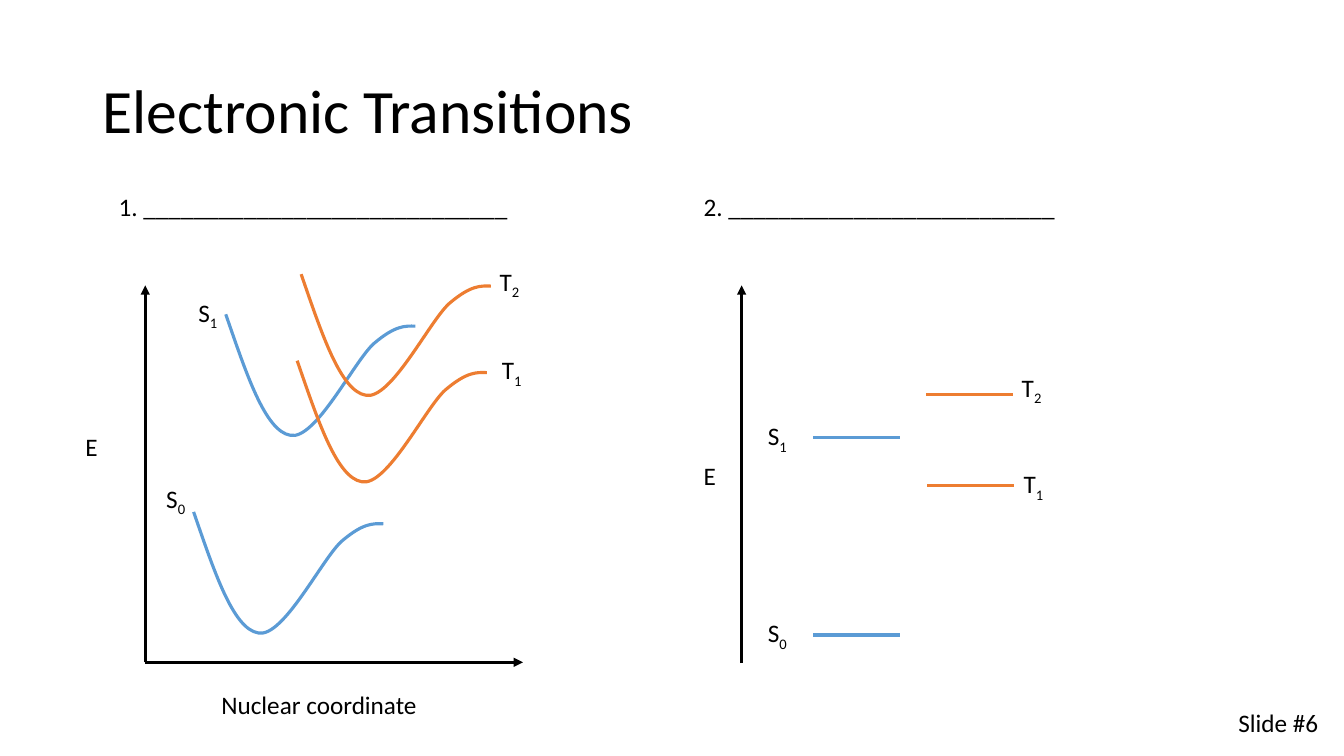
"""Build the Electronic Transitions slide with potential curves and energy levels."""
import dataclasses
import typing

import lxml.etree
import pptx
import pptx.dml.color
import pptx.enum.shapes
import pptx.enum.text
import pptx.oxml.ns
import pptx.shapes.connector
import pptx.slide
import pptx.util

Cm = pptx.util.Cm
Color = pptx.dml.color.RGBColor
Point = tuple[float, float]
qn = pptx.oxml.ns.qn


@dataclasses.dataclass(frozen=True)
class Theme:
    """Colours, font and sizes of the slide."""
    font: str = "Calibri"
    ink: Color = Color(0x00, 0x00, 0x00)
    singlet: Color = Color(0x5B, 0x9B, 0xD5)
    triplet: Color = Color(0xED, 0x7D, 0x31)
    title_size: float = 44
    body_size: float = 18
    line_width: float = 2.25


THEME = Theme()


@dataclasses.dataclass(frozen=True)
class Label:
    """A text with its box in centimetres."""
    text: str
    left: float
    top: float
    width: float
    height: float = 1.02
    subscript: str = ""
    size: float = THEME.body_size
    line_spacing: float = 1.0


@dataclasses.dataclass(frozen=True)
class State:
    """An electronic state, shown as a curve and as a level."""
    letter: str
    number: str
    color: Color
    curve: Point
    curve_label: Point
    level: Point
    level_label: Point


@dataclasses.dataclass(frozen=True)
class Axis:
    """An arrow from the start to the end of an axis."""
    start: Point
    end: Point


WELL: list[Point] = [
    (0, 0), (0.51, 1.47), (0.99, 2.95), (1.63, 3.05), (2.26, 3.18),
    (3.23, 1.19), (3.73, 0.74), (4.27, 0.28), (4.52, 0.29), (4.78, 0.3),
]
LEVEL_LENGTH = 2.18
STATE_LABEL_WIDTH = 1.4

STATES = [
    State("S", "0", THEME.singlet, (4.88, 12.9), (3.94, 12.09), (20.5, 16.0), (19.1, 15.49)),
    State("S", "1", THEME.singlet, (5.69, 7.92), (4.75, 7.42), (20.5, 11.02), (19.1, 10.52)),
    State("T", "1", THEME.triplet, (7.49, 9.09), (12.4, 8.86), (23.37, 12.24), (25.55, 11.73)),
    State("T", "2", THEME.triplet, (7.59, 6.91), (12.34, 6.63), (23.34, 9.93), (25.5, 9.3)),
]
AXES = [
    Axis((3.66, 16.69), (3.66, 7.19)),
    Axis((3.66, 16.69), (13.18, 16.69)),
    Axis((18.69, 16.71), (18.69, 7.19)),
]
LABELS = [
    Label("Electronic Transitions", 2.34, 1.02, 29.21, 3.68,
          size=THEME.title_size, line_spacing=0.9),
    Label("1. _____________________________", 2.74, 4.7, 12.6),
    Label("2. __________________________", 17.48, 4.7, 12.6),
    Label("E", 1.9, 10.74, 1.22),
    Label("E", 17.48, 11.46, 1.22),
    Label("Nuclear coordinate", 5.33, 17.25, 6.6),
    Label("Slide #6", 30.96, 17.7, 2.9),
]


def apply_format(target: typing.Any, values: dict[str, typing.Any]) -> None:
    """Set each named attribute of the target."""
    for name, value in values.items():
        setattr(target, name, value)


def format_line(line: typing.Any, color: Color) -> None:
    """Give a line its colour and width."""
    line.color.rgb = color
    line.width = pptx.util.Pt(THEME.line_width)


def add_label(slide: pptx.slide.Slide, label: Label) -> None:
    """Add a text box, with a subscript where the label has one."""
    box = slide.shapes.add_textbox(
        Cm(label.left), Cm(label.top), Cm(label.width), Cm(label.height))
    apply_format(box.text_frame, {
        "word_wrap": True,
        "vertical_anchor": pptx.enum.text.MSO_ANCHOR.MIDDLE,
    })
    paragraph = box.text_frame.paragraphs[0]
    paragraph.line_spacing = label.line_spacing
    for text, baseline in ((label.text, 0), (label.subscript, -25000)):
        if text:
            run = paragraph.add_run()
            run.text = text
            apply_format(run.font, {"name": THEME.font, "size": pptx.util.Pt(label.size)})
            run.font.color.rgb = THEME.ink
            if baseline:
                run._r.get_or_add_rPr().set("baseline", str(baseline))


def add_line(slide: pptx.slide.Slide, start: Point, end: Point,
             color: Color) -> pptx.shapes.connector.Connector:
    """Add a straight line without a shadow."""
    connector = slide.shapes.add_connector(
        pptx.enum.shapes.MSO_CONNECTOR.STRAIGHT, *(Cm(value) for value in start + end))
    format_line(connector.line, color)
    lxml.etree.SubElement(connector._element.spPr, qn("a:effectLst"))
    return connector


def add_axis(slide: pptx.slide.Slide, axis: Axis) -> None:
    """Add a line with an arrowhead at its end."""
    connector = add_line(slide, axis.start, axis.end, THEME.ink)
    lxml.etree.SubElement(connector.line._get_or_add_ln(), qn("a:tailEnd"), type="triangle")


def add_well(slide: pptx.slide.Slide, origin: Point, color: Color) -> None:
    """Add a potential well made of three Bézier segments."""
    points = [(Cm(x), Cm(y)) for x, y in WELL]
    builder = slide.shapes.build_freeform(*points[0])
    builder.add_line_segments(points[1:], close=False)
    shape = builder.convert_to_shape(Cm(origin[0]), Cm(origin[1]))
    outline = next(shape._element.iter(qn("a:path")))
    segments = outline.findall(qn("a:lnTo"))
    for first in range(0, len(segments), 3):
        curve = lxml.etree.SubElement(outline, qn("a:cubicBezTo"))
        for segment in segments[first:first + 3]:
            curve.append(segment[0])
            outline.remove(segment)
    shape.height = max(y for x, y in points[::3])
    outline.set("h", str(shape.height))
    shape.fill.background()
    shape.shadow.inherit = False
    format_line(shape.line, color)


def add_state(slide: pptx.slide.Slide, state: State) -> None:
    """Add the curve, the level and both labels of a state."""
    add_well(slide, state.curve, state.color)
    left, top = state.level
    add_line(slide, state.level, (left + LEVEL_LENGTH, top), state.color)
    for position in (state.curve_label, state.level_label):
        add_label(slide, Label(state.letter, *position, STATE_LABEL_WIDTH,
                               subscript=state.number))


def main() -> None:
    """Build and save the presentation."""
    presentation = pptx.Presentation()
    apply_format(presentation, {"slide_width": Cm(33.87), "slide_height": Cm(19.05)})
    slide = presentation.slides.add_slide(presentation.slide_layouts[6])
    for label in LABELS:
        add_label(slide, label)
    for axis in AXES:
        add_axis(slide, axis)
    for state in STATES:
        add_state(slide, state)
    presentation.save("out.pptx")


if __name__ == "__main__":
    main()
